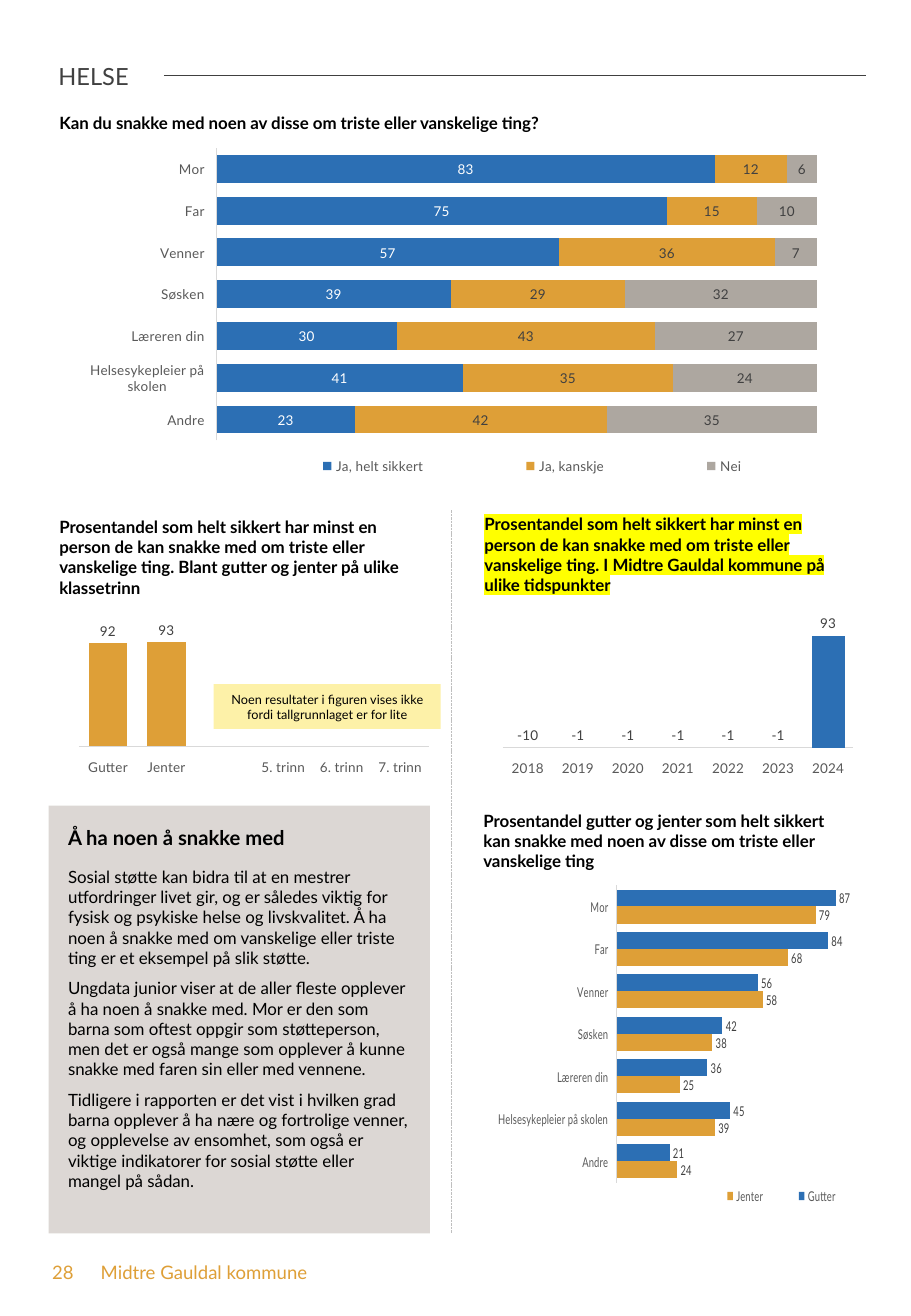
"""Build the health page of the municipal youth report."""
import pptx
import pptx.chart.data
import pptx.dml.color
import pptx.enum.chart
import pptx.enum.dml
import pptx.enum.shapes
import pptx.enum.text
import pptx.oxml
import pptx.oxml.ns
import pptx.oxml.xmlchemy
import pptx.util

Pt = pptx.util.Pt
RGBColor = pptx.dml.color.RGBColor
ChartType = pptx.enum.chart.XL_CHART_TYPE
LegendPosition = pptx.enum.chart.XL_LEGEND_POSITION
Anchor = pptx.enum.text.MSO_ANCHOR
Align = pptx.enum.text.PP_ALIGN
make_element = pptx.oxml.xmlchemy.OxmlElement

BLACK = RGBColor(0x00, 0x00, 0x00)
WHITE = RGBColor(0xFF, 0xFF, 0xFF)
DARK = RGBColor(0x40, 0x40, 0x40)
GREY = RGBColor(0x59, 0x59, 0x59)
SILVER = RGBColor(0xBF, 0xBF, 0xBF)
AXIS = RGBColor(0xD9, 0xD9, 0xD9)
BLUE = RGBColor(0x2C, 0x6F, 0xB4)
ORANGE = RGBColor(0xDE, 0x9F, 0x37)
STONE = RGBColor(0xAD, 0xA7, 0xA0)
PANEL = RGBColor(0xA8, 0x9D, 0x94)
NOTE = RGBColor(0xFD, 0xF1, 0xA8)
YELLOW = RGBColor(0xFF, 0xFF, 0x00)

PEOPLE = ["Mor", "Far", "Venner", "Søsken", "Læreren din", "Helsesykepleier på skolen", "Andre"]
SHARE = "Prosentandel som helt sikkert har minst en person de kan snakke med om triste eller vanskelige ting. "
ADVICE = [
    "Å ha noen å snakke med",
    "Sosial støtte kan bidra til at en mestrer utfordringer livet gir, og er således viktig for fysisk og "
    "psykiske helse og livskvalitet. Å ha noen å snakke med om vanskelige eller triste ting er et eksempel "
    "på slik støtte.",
    "Ungdata junior viser at de aller fleste opplever å ha noen å snakke med. Mor er den som barna som "
    "oftest oppgir som støtteperson, men det er også mange som opplever å kunne snakke med faren sin eller "
    "med vennene.",
    "Tidligere i rapporten er det vist i hvilken grad barna opplever å ha nære og fortrolige venner, og "
    "opplevelse av ensomhet, som også er viktige indikatorer for sosial støtte eller mangel på sådan.",
]


class ReportPage:
    """Holds the page style and adds each kind of element."""

    font_name = "Lato"
    chart_size = 8

    def __init__(self, deck):
        self.page = deck.slides.add_slide(deck.slide_layouts[1])
        self.shapes = self.page.shapes

    def style_font(self, font, size, color, bold=False):
        font.name = self.font_name
        font.size = Pt(size)
        font.bold = bold
        font.color.rgb = color

    def place(self, shape, box):
        shape.left, shape.top, shape.width, shape.height = map(Pt, box)

    def fill_text(self, frame, text, size, color, bold=False):
        frame.word_wrap = True
        frame.auto_size = pptx.enum.text.MSO_AUTO_SIZE.NONE
        frame.vertical_anchor = Anchor.TOP
        frame.text = text
        for para in frame.paragraphs:
            for span in para.runs:
                self.style_font(span.font, size, color, bold)

    def title(self, box, text):
        title = self.shapes.title
        self.place(title, box)
        self.fill_text(title.text_frame, text, 14, DARK)
        title.text_frame.paragraphs[0].alignment = Align.LEFT

    def text(self, box, text, size=10, color=BLACK, bold=True):
        label = self.shapes.add_textbox(*map(Pt, box))
        self.fill_text(label.text_frame, text, size, color, bold)
        return label.text_frame.paragraphs[0]

    def highlight(self, para, color):
        for span in para.runs:
            marker = make_element("a:highlight")
            tint = make_element("a:srgbClr")
            tint.set("val", str(color))
            marker.append(tint)
            span.font.fill._xPr.find(pptx.oxml.ns.qn("a:solidFill")).addnext(marker)

    def tab_stop(self, para, position):
        stops = make_element("a:tabLst")
        stop = make_element("a:tab")
        stop.set("pos", str(Pt(position)))
        stop.set("algn", "l")
        stops.append(stop)
        para._p.get_or_add_pPr().append(stops)

    def line(self, start, end, color, width, dash=None):
        rule = self.shapes.add_connector(pptx.enum.shapes.MSO_CONNECTOR.STRAIGHT, *map(Pt, start + end))
        rule.line.color.rgb = color
        rule.line.width = Pt(width)
        if dash:
            rule.line.dash_style = dash
        rule.element.spPr.append(make_element("a:effectLst"))

    def panel(self, box, paragraphs):
        body = self.page.placeholders[1]
        self.place(body, box)
        body.fill.solid()
        body.fill.fore_color.rgb = PANEL
        alpha = make_element("a:alpha")
        alpha.set("val", "40000")
        body.element.spPr.find(".//" + pptx.oxml.ns.qn("a:srgbClr")).append(alpha)
        frame = body.text_frame
        self.fill_text(frame, "\n".join(paragraphs), 10, BLACK)
        frame.margin_left = frame.margin_right = frame.margin_top = frame.margin_bottom = Pt(11.5)
        for para in frame.paragraphs:
            properties = para._p.get_or_add_pPr()
            properties.set("marL", "0")
            properties.set("indent", "0")
            properties.append(make_element("a:buNone"))
            para.space_before = Pt(6)
        heading = frame.paragraphs[0]
        heading.space_before = Pt(0)
        heading.space_after = Pt(4)
        self.style_font(heading.runs[0].font, 12, BLACK, True)

    def note(self, box, text):
        note = self.shapes.add_shape(pptx.enum.shapes.MSO_SHAPE.RECTANGLE, *map(Pt, box))
        note.shadow.inherit = False
        note.fill.solid()
        note.fill.fore_color.rgb = NOTE
        note.line.fill.background()
        self.fill_text(note.text_frame, text, 7.5, BLACK)
        note.text_frame.vertical_anchor = Anchor.MIDDLE
        note.text_frame.paragraphs[0].alignment = Align.CENTER

    def lay_out(self, parent, index, area, inner=False):
        for old in parent.findall(pptx.oxml.ns.qn("c:layout")):
            parent.remove(old)
        layout, manual = make_element("c:layout"), make_element("c:manualLayout")
        settings = [("layoutTarget", "inner")] if inner else []
        settings += [("xMode", "edge"), ("yMode", "edge"), *zip("xywh", area)]
        for name, value in settings:
            setting = make_element("c:" + name)
            setting.set("val", str(value))
            manual.append(setting)
        layout.append(manual)
        parent.insert(index, layout)

    def chart(self, kind, box, categories, series, area, overlap, legend=None, reverse=False):
        data = pptx.chart.data.CategoryChartData(number_format="0")
        data.categories = categories
        for name, values, *colors in series:
            data.add_series(name, values)
        chart = self.shapes.add_chart(kind, *map(Pt, box), data).chart
        chart.has_title = False
        self.style_font(chart.font, self.chart_size, BLACK)
        plot = chart.plots[0]
        plot.vary_by_categories = False
        plot.gap_width, plot.overlap = 50, overlap
        stacked = kind == ChartType.BAR_STACKED
        for bars, (name, values, color, label_color) in zip(plot.series, series):
            bars.invert_if_negative = False
            bars.format.fill.solid()
            bars.format.fill.fore_color.rgb = color
            labels = bars.data_labels
            labels.show_value = True
            labels.number_format, labels.number_format_is_linked = "0", False
            self.style_font(labels.font, self.chart_size, label_color)
            if not stacked:
                labels.position = pptx.enum.chart.XL_LABEL_POSITION.OUTSIDE_END
        axis = chart.category_axis
        axis.major_tick_mark = axis.minor_tick_mark = pptx.enum.chart.XL_TICK_MARK.NONE
        axis.tick_label_position = pptx.enum.chart.XL_TICK_LABEL_POSITION.LOW
        axis.reverse_order = reverse
        axis.format.line.color.rgb = AXIS
        axis.format.line.width = Pt(0.75)
        self.style_font(axis.tick_labels.font, self.chart_size, GREY)
        scale = chart.value_axis
        scale.visible = scale.has_major_gridlines = False
        scale.minimum_scale = 0
        if stacked:
            scale.maximum_scale = 100
        self.lay_out(chart._chartSpace.chart.plotArea, 0, area, True)
        chart.has_legend = legend is not None
        if legend:
            position, legend_area = legend
            chart.legend.position = position
            chart.legend.include_in_layout = False
            self.style_font(chart.legend.font, self.chart_size, GREY)
            self.lay_out(chart.legend._element, 1, legend_area)


def main():
    deck = pptx.Presentation()
    deck.slide_width, deck.slide_height = Pt(540), Pt(779.76)
    report = ReportPage(deck)
    report.title((27.4, 33.1, 484.6, 24.5), "HELSE")
    report.line((97.2, 44.6), (513.4, 44.6), DARK, 0.3)
    report.text((28.1, 63.4, 483.8, 19.4), "Kan du snakke med noen av disse om triste eller vanskelige ting?")
    report.chart(ChartType.BAR_STACKED, (36, 85.7, 462.2, 201.6), PEOPLE, [
        ("Ja, helt sikkert", (83, 75, 57, 39, 30, 41, 23), BLUE, WHITE),
        ("Ja, kanskje", (12, 15, 36, 29, 43, 35, 42), ORANGE, DARK),
        ("Nei", (6, 10, 7, 32, 27, 24, 35), STONE, DARK),
    ], (0.2, 0.01, 0.77, 0.86), 100, (LegendPosition.BOTTOM, (0.21, 0.91, 0.79, 0.07)), True)
    report.text((28.1, 302.4, 234.7, 55.4), SHARE + "Blant gutter og jenter på ulike klassetrinn")
    municipality = report.text((280.1, 301, 234.7, 55.4), SHARE + "I Midtre Gauldal kommune på ulike tidspunkter")
    report.highlight(municipality, YELLOW)
    report.chart(ChartType.COLUMN_CLUSTERED, (291.6, 360, 214.6, 100.1), [str(year) for year in range(2018, 2025)],
                 [("Series 1", (-10, -1, -1, -1, -1, -1, 93), BLUE, DARK)], (0.03, 0.12, 0.97, 0.71), -10)
    report.chart(ChartType.COLUMN_CLUSTERED, (40.3, 352.1, 214.6, 108.7),
                 ["Gutter", "Jenter", "", "5. trinn", "6. trinn", "7. trinn"],
                 [("Series 1", (92, 93, None, None, None, None), ORANGE, DARK)], (0.03, 0.22, 0.97, 0.61), -10)
    report.text((279.4, 476.6, 234, 43.9), "Prosentandel gutter og jenter som helt sikkert kan snakke med noen av "
                "disse om triste eller vanskelige ting")
    report.chart(ChartType.BAR_CLUSTERED, (295.2, 520.6, 219.6, 198), PEOPLE, [
        ("Gutter", (87, 84, 56, 42, 36, 45, 21), BLUE, DARK),
        ("Jenter", (79, 68, 58, 38, 25, 39, 24), ORANGE, DARK),
    ], (0.37, 0.02, 0.97, 0.89), 0, (LegendPosition.TOP, (0.33, 0.92, 0.98, 0.06)), True)
    footer = report.text((23.8, 743.8, 479.5, 20.9), "28\tMidtre Gauldal kommune", 11, ORANGE, False)
    report.tab_stop(footer, 28.8)
    report.line((267.8, 302.4), (267.8, 730.8), SILVER, 0.5, pptx.enum.dml.MSO_LINE.SQUARE_DOT)
    report.panel((28.8, 477.4, 226.1, 253.4), ADVICE)
    report.note((126.7, 405.4, 134.6, 26.6), "Noen resultater i figuren vises ikke fordi tallgrunnlaget er for lite")
    deck.save("out.pptx")


if __name__ == "__main__":
    main()
